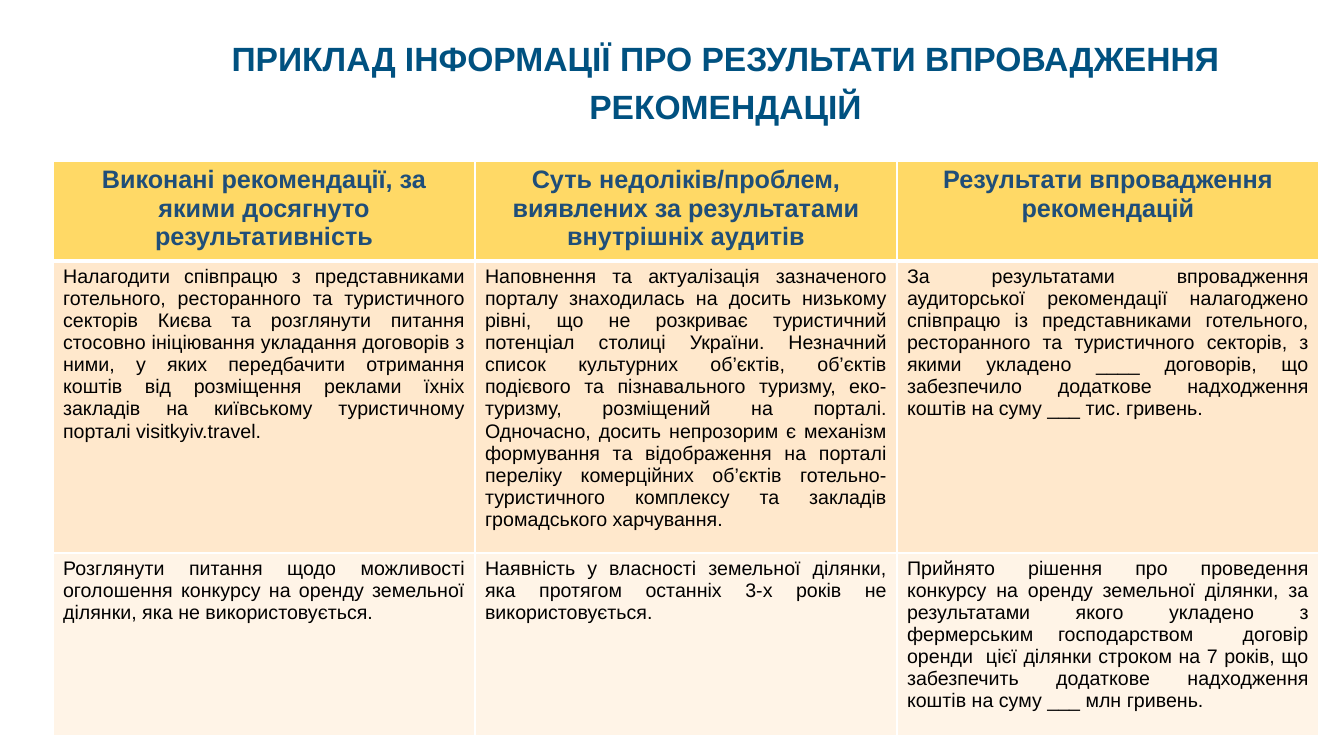
from lxml.etree import SubElement
from pptx import Presentation
from pptx.dml.color import RGBColor
from pptx.enum.text import MSO_ANCHOR as Anchor, PP_ALIGN as Align
from pptx.oxml.ns import qn
from pptx.util import Emu, Pt

SCALE = 914400 / 100.8
FONT = "Arial"
BLUE = RGBColor(0x00, 0x51, 0x80)
NAVY = RGBColor(0x1F, 0x4E, 0x79)
BLACK = RGBColor(0x00, 0x00, 0x00)
WHITE = RGBColor(0xFF, 0xFF, 0xFF)
GOLD = RGBColor(0xFF, 0xD9, 0x66)
PEACH = RGBColor(0xFF, 0xE8, 0xCC)
CREAM = RGBColor(0xFF, 0xF4, 0xE7)

TITLE = "ПРИКЛАД ІНФОРМАЦІЇ ПРО РЕЗУЛЬТАТИ ВПРОВАДЖЕННЯ РЕКОМЕНДАЦІЙ"
HEADS = [
    ["Виконані рекомендації, за", "якими досягнуто", "результативність"],
    ["Суть недоліків/проблем,", "виявлених за результатами", "внутрішніх аудитів"],
    ["Результати впровадження", "рекомендацій"],
]
BODY = [
    [
        "Налагодити співпрацю з представниками готельного, ресторанного та "
        "туристичного секторів Києва та розглянути питання стосовно ініціювання "
        "укладання договорів з ними, у яких передбачити отримання коштів від "
        "розміщення реклами їхніх закладів на київському туристичному порталі "
        "visitkyiv.travel.",
        "Наповнення та актуалізація зазначеного порталу знаходилась на досить "
        "низькому рівні, що не розкриває туристичний потенціал столиці України. "
        "Незначний список культурних об’єктів, об’єктів подієвого та "
        "пізнавального туризму, еко-туризму, розміщений на порталі. Одночасно, "
        "досить непрозорим є механізм формування та відображення на порталі "
        "переліку комерційних об’єктів готельно-туристичного комплексу та "
        "закладів громадського харчування.",
        "За результатами впровадження аудиторської рекомендації налагоджено "
        "співпрацю із представниками готельного, ресторанного та туристичного "
        "секторів, з якими укладено ____ договорів, що забезпечило додаткове "
        "надходження коштів на суму ___ тис. гривень.",
    ],
    [
        "Розглянути питання щодо можливості оголошення конкурсу на оренду "
        "земельної ділянки, яка не використовується.",
        "Наявність у власності земельної ділянки, яка протягом останніх 3-х "
        "років не використовується.",
        "Прийнято рішення про проведення конкурсу на оренду земельної ділянки, "
        "за результатами якого укладено з фермерським господарством  договір "
        "оренди  цієї ділянки строком на 7 років, що забезпечить додаткове "
        "надходження коштів на суму ___ млн гривень.",
    ],
]
COL = 422
ROWS = [100, 292, 183]


def px(num):
    return Emu(round(num * SCALE))


def write(frame, lines, size, color, bold, align):
    for num, line in enumerate(lines):
        para = frame.add_paragraph() if num else frame.paragraphs[0]
        para.alignment = align
        run = para.add_run()
        run.text = line
        font = run.font
        font.name, font.size, font.bold = FONT, Pt(size), bold
        font.color.rgb = color


def add_title(slide):
    title = slide.shapes.title
    title.left, title.top, title.width, title.height = map(px, (121, 26, 1209, 104))
    frame = title.text_frame
    frame.word_wrap = True
    frame.vertical_anchor = Anchor.MIDDLE
    frame.margin_left = frame.margin_right = px(3)
    frame.margin_top = frame.margin_bottom = px(3)
    write(frame, [TITLE], 24, BLUE, True, Align.CENTER)
    para = frame.paragraphs[0]
    para.line_spacing = 1.2
    para.space_before = Pt(0)


def set_edge(props, side, width):
    edge = SubElement(props, qn(f"a:{side}"), w=str(Pt(width)))
    fill = SubElement(edge, qn("a:solidFill"))
    SubElement(fill, qn("a:srgbClr"), val=str(WHITE))


def fill_cell(cell, lines, fill, head, top, base):
    props = cell._tc.get_or_add_tcPr()
    for side, width in (("lnL", 1), ("lnR", 1), ("lnT", top), ("lnB", base)):
        set_edge(props, side, width)
    cell.fill.solid()
    cell.fill.fore_color.rgb = fill
    if head:
        write(cell.text_frame, lines, 18, NAVY, True, Align.CENTER)
    else:
        write(cell.text_frame, lines, 14, BLACK, False, Align.JUSTIFY)


def add_grid(slide):
    cols = len(HEADS)
    frame = slide.shapes.add_table(
        len(ROWS), cols, px(53), px(161), px(COL * cols), px(sum(ROWS)))
    table = frame.table
    for col in table.columns:
        col.width = px(COL)
    for row, high in zip(table.rows, ROWS):
        row.height = px(high)
    for col, lines in enumerate(HEADS):
        fill_cell(table.cell(0, col), lines, GOLD, True, 1, 3)
    for row, (texts, fill) in enumerate(zip(BODY, (PEACH, CREAM)), 1):
        top = 3 if row == 1 else 1
        for col, text in enumerate(texts):
            fill_cell(table.cell(row, col), [text], fill, False, top, 1)


def main():
    deck = Presentation()
    deck.slide_width, deck.slide_height = px(1344), px(756)
    slide = deck.slides.add_slide(deck.slide_layouts[5])
    add_title(slide)
    add_grid(slide)
    deck.save("out.pptx")


if __name__ == "__main__":
    main()
